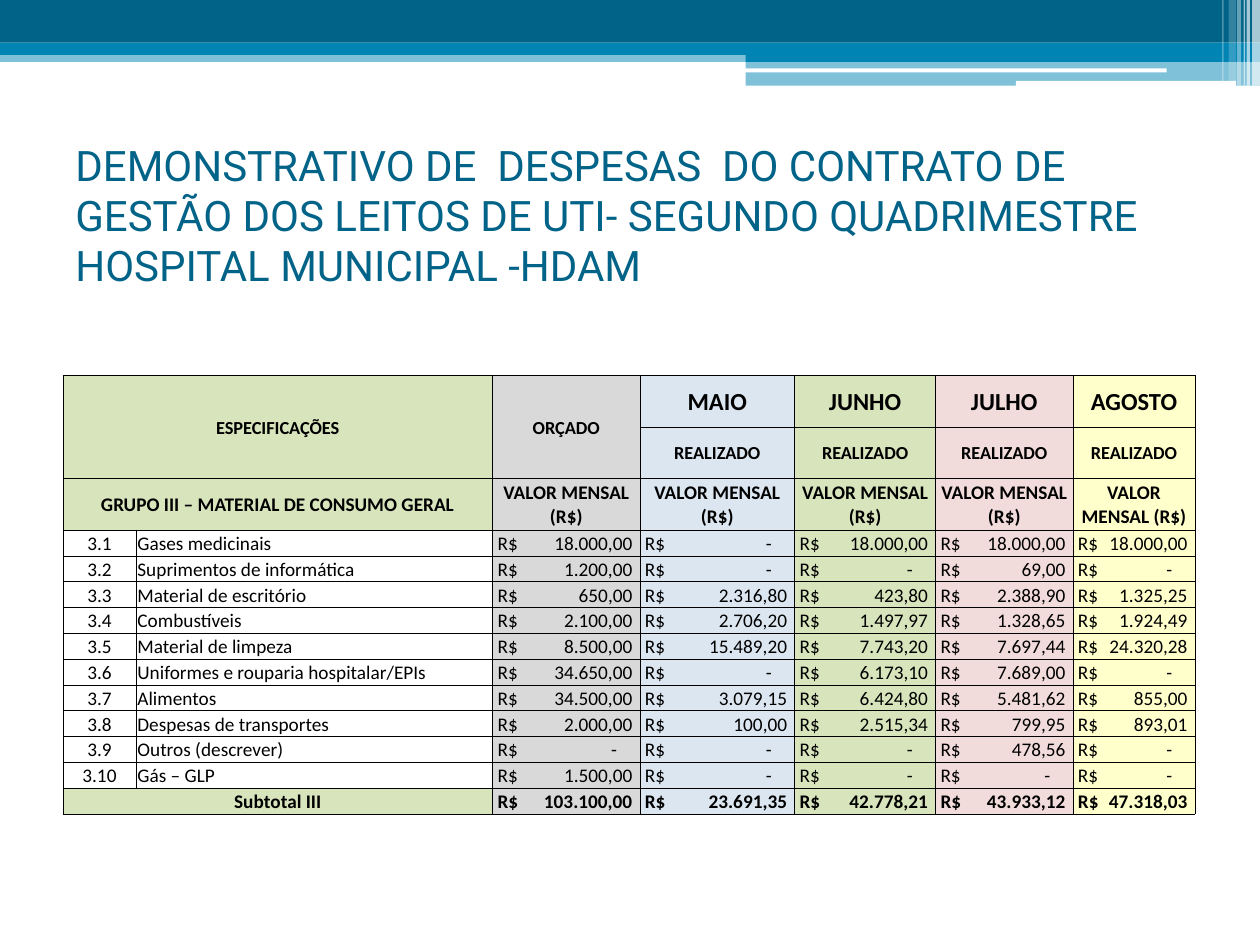
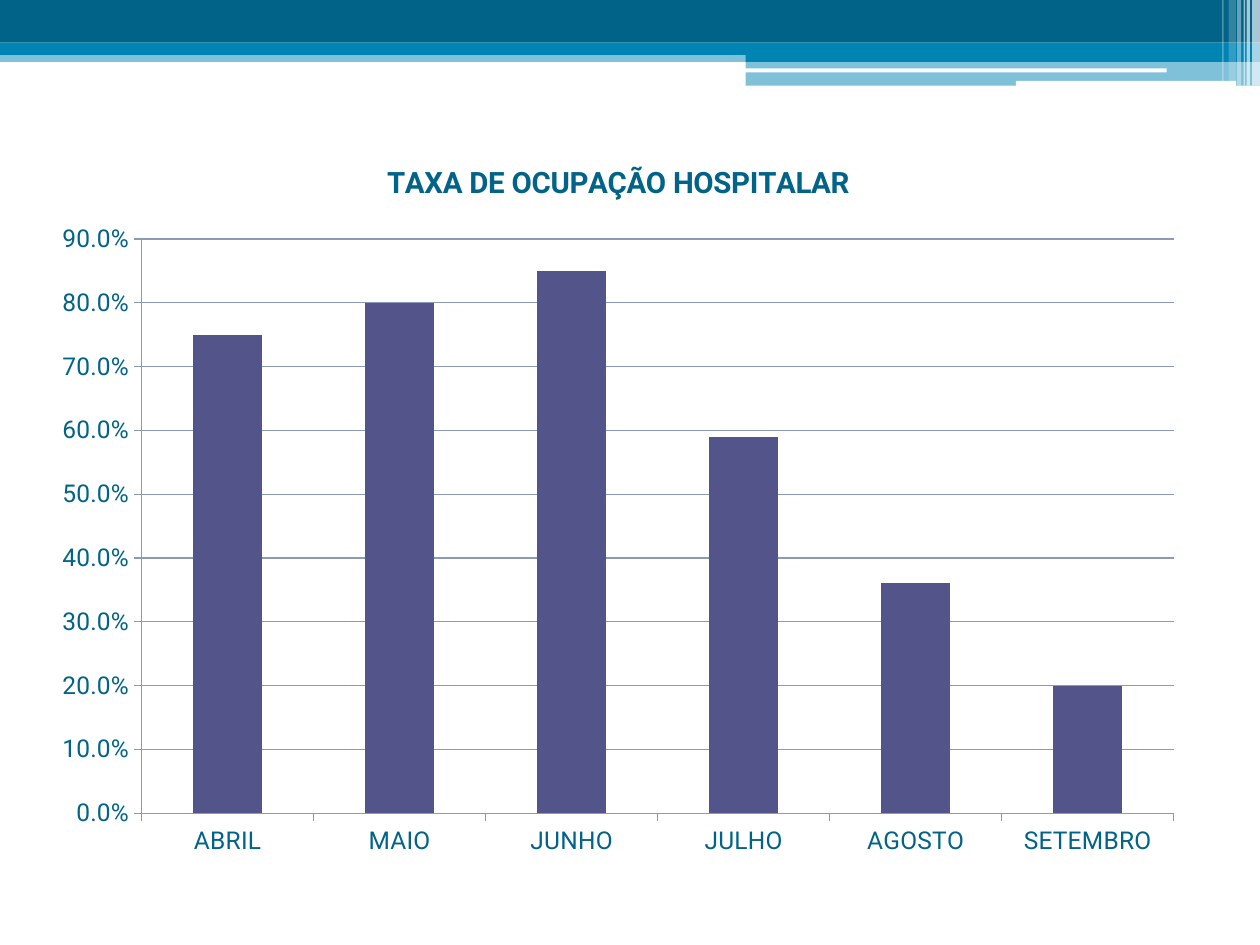
from lxml.etree import SubElement
from pptx import Presentation
from pptx.chart.data import CategoryChartData
from pptx.dml.color import RGBColor
from pptx.enum.chart import XL_CHART_TYPE as ChartType, XL_TICK_MARK as TickMark
from pptx.enum.shapes import MSO_SHAPE as Preset
from pptx.enum.text import MSO_ANCHOR as Anchor, PP_ALIGN as Align
from pptx.oxml import parse_xml
from pptx.oxml.ns import nsdecls, qn
from pptx.util import Cm, Pt

NAVY, BLUE, WHITE, BLACK = "006387", "0084B4", "FFFFFF", "000000"
GREEN, GRAY, PALE_BLUE, PINK, YELLOW = "D8E4BC", "D9D9D9", "DCE6F1", "F2DCDB", "FFFFCC"
BAR, AXIS = "53548A", "8A9CB5"

BANDS = [
    (0, 1.02, 25.4, 0.23, BLUE, 50),
    (0, 0, 25.4, 0.86, NAVY, 100),
    (0, 0.86, 25.4, 0.25, BLUE, 100),
    (15.03, 1, 10.37, 0.25, BLUE, 100),
    (15.03, 1.23, 10.37, 0.5, BLUE, 50),
]
WHITE_BARS = [(15.02, 1.38, 8.5, 0.08), (20.48, 1.63, 4.44, 0.1)]
STRIPES = [
    (25.24, 0.16, 1.73, 65),
    (25.13, 0.07, 1.73, 65),
    (25.07, 0.03, 1.73, 60),
    (24.94, 0.08, 1.73, 40),
    (24.77, 0.15, 1.63, 20),
    (24.64, 0.03, 1.63, 30),
]

TITLE = ("DEMONSTRATIVO DE  DESPESAS  DO CONTRATO DE GESTÃO DOS LEITOS DE UTI- "
         "SEGUNDO QUADRIMESTRE\nHOSPITAL MUNICIPAL -HDAM")
COLUMN_WIDTHS = [1.47, 7.19, 2.97, 3.12, 2.84, 2.77, 2.46]
VALUE_FILLS = [GRAY, PALE_BLUE, GREEN, PINK, YELLOW]
MONTHS = ["MAIO", "JUNHO", "JULHO", "AGOSTO"]
EXPENSES = [
    ("3.1", "Gases medicinais", "18.000,00", "-", "18.000,00", "18.000,00", "18.000,00"),
    ("3.2", "Suprimentos de informática", "1.200,00", "-", "-", "69,00", "-"),
    ("3.3", "Material de escritório", "650,00", "2.316,80", "423,80", "2.388,90", "1.325,25"),
    ("3.4", "Combustíveis", "2.100,00", "2.706,20", "1.497,97", "1.328,65", "1.924,49"),
    ("3.5", "Material de limpeza", "8.500,00", "15.489,20", "7.743,20", "7.697,44", "24.320,28"),
    ("3.6", "Uniformes e rouparia hospitalar/EPIs", "34.650,00", "-", "6.173,10", "7.689,00", "-"),
    ("3.7", "Alimentos", "34.500,00", "3.079,15", "6.424,80", "5.481,62", "855,00"),
    ("3.8", "Despesas de transportes", "2.000,00", "100,00", "2.515,34", "799,95", "893,01"),
    ("3.9", "Outros (descrever)", "-", "-", "-", "478,56", "-"),
    ("3.10", "Gás – GLP", "1.500,00", "-", "-", "-", "-"),
]
SUBTOTALS = ["103.100,00", "23.691,35", "42.778,21", "43.933,12", "47.318,03"]
OCCUPANCY = {"ABRIL": 0.75, "MAIO": 0.8, "JUNHO": 0.85,
             "JULHO": 0.59, "AGOSTO": 0.36, "SETEMBRO": 0.2}


def color(value):
    """Turn a hex string into a colour."""
    return RGBColor.from_string(value)


def write(frame, text, size=11, font="Calibri", fill=BLACK, bold=False, align=Align.LEFT):
    """Put formatted text into the first paragraph of a text frame."""
    paragraph = frame.paragraphs[0]
    paragraph.text = text
    paragraph.alignment = align
    for run in paragraph.runs:
        run.font.size, run.font.name, run.font.bold = Pt(size), font, bold
        run.font.color.rgb = color(fill)
    return paragraph


def draw_borders(cell):
    """Draw a thin black line on every side of a cell."""
    properties = cell._tc.get_or_add_tcPr()
    for index, side in enumerate("LRTB"):
        properties.insert(index, parse_xml(
            f'<a:ln{side} {nsdecls("a")} w="{Pt(0.5)}"><a:solidFill>'
            f'<a:srgbClr val="{BLACK}"/></a:solidFill></a:ln{side}>'))


class Deck:
    """Hold the presentation, its style and the current slide."""

    def __init__(self):
        """Open an empty 4:3 presentation."""
        self.presentation = Presentation()
        self.presentation.slide_width, self.presentation.slide_height = Cm(25.4), Cm(19.05)
        self.slide = None

    def add_slide(self):
        """Start a slide with the shared header."""
        self.slide = self.presentation.slides.add_slide(self.presentation.slide_layouts[6])
        for *box, fill, opacity in BANDS:
            self.add_band(box, fill, opacity)
        for box in WHITE_BARS:
            self.add_band(box, WHITE, preset=Preset.ROUNDED_RECTANGLE)
        for left, width, height, opacity in STRIPES:
            self.add_band((left, 0, width, height), WHITE, opacity)

    def add_band(self, box, fill, opacity=100, preset=Preset.RECTANGLE):
        """Add a plain filled shape, translucent below full opacity."""
        shape = self.slide.shapes.add_shape(preset, *map(Cm, box))
        shape.shadow.inherit = False
        shape.fill.solid()
        shape.fill.fore_color.rgb = color(fill)
        shape.line.fill.background()
        if opacity < 100:
            fill_color = shape.element.spPr.find(".//" + qn("a:srgbClr"))
            SubElement(fill_color, qn("a:alpha")).set("val", str(opacity * 1000))

    def add_title(self, text):
        """Add the slide title."""
        frame = self.slide.shapes.add_textbox(Cm(1.27), Cm(2.74), Cm(22.86), Cm(3.18)).text_frame
        frame.word_wrap = True
        frame.vertical_anchor = Anchor.MIDDLE
        write(frame, text, size=24, font="Roboto", fill=NAVY)

    def add_table(self, left, top, widths, heights):
        """Add an unstyled table with thin borders."""
        table = self.slide.shapes.add_table(
            len(heights), len(widths), Cm(left), Cm(top), Cm(sum(widths)), Cm(sum(heights))).table
        table.first_row = table.horz_banding = False
        for column, width in zip(table.columns, widths):
            column.width = Cm(width)
        for row, height in zip(table.rows, heights):
            row.height = Cm(height)
        for cell in table.iter_cells():
            cell.fill.background()
            cell.margin_left = cell.margin_right = cell.margin_top = Cm(0.03)
            cell.margin_bottom = 0
            cell.vertical_anchor = Anchor.MIDDLE
            draw_borders(cell)
        return table

    def fill_cell(self, cell, text, fill=None, **text_format):
        """Write one cell and colour it."""
        if fill:
            cell.fill.solid()
            cell.fill.fore_color.rgb = color(fill)
        return write(cell.text_frame, text, **text_format)

    def fill_amounts(self, table, row, amounts, bold=False):
        """Write a row of amounts, each right-aligned by a tab stop."""
        for column, (amount, fill) in enumerate(zip(amounts, VALUE_FILLS), 2):
            cell = table.cell(row, column)
            cell.margin_left = Cm(0.1)
            paragraph = self.fill_cell(cell, f"R$\t{amount}", fill, bold=bold)
            right_gap = 0.56 if amount == "-" else 0.25
            tabs = SubElement(paragraph._p.get_or_add_pPr(), qn("a:tabLst"))
            position = Cm(COLUMN_WIDTHS[column] - right_gap)
            SubElement(tabs, qn("a:tab"), pos=str(int(position)), algn="r")

    def add_column_chart(self, box, title, values):
        """Add a single-series column chart of percentages."""
        data = CategoryChartData()
        data.categories = list(values)
        data.add_series(title, list(values.values()))
        chart = self.slide.shapes.add_chart(
            ChartType.COLUMN_CLUSTERED, *map(Cm, box), data).chart
        chart.font.size, chart.font.name = Pt(14), "Roboto"
        chart.font.color.rgb = color(NAVY)
        chart.has_legend = False
        chart.has_title = True
        write(chart.chart_title.text_frame, title, size=16.8, font="Roboto",
              fill=NAVY, bold=True, align=Align.CENTER)
        plot = chart.plots[0]
        plot.gap_width, plot.vary_by_categories = 150, False
        plot.series[0].format.fill.solid()
        plot.series[0].format.fill.fore_color.rgb = color(BAR)
        value_axis = chart.value_axis
        value_axis.minimum_scale, value_axis.maximum_scale, value_axis.major_unit = 0, 0.9, 0.1
        value_axis.tick_labels.number_format = "0.0%"
        value_axis.tick_labels.number_format_is_linked = False
        for axis in (chart.category_axis, value_axis):
            axis.major_tick_mark = TickMark.OUTSIDE
        for part in (chart.category_axis, value_axis, value_axis.major_gridlines):
            part.format.line.color.rgb = color(AXIS)
            part.format.line.width = Pt(0.75)


def add_expense_table(deck):
    """Fill the table of budgeted and actual expenses."""
    table = deck.add_table(1.27, 7.57, COLUMN_WIDTHS, [1.04] * 3 + [0.52] * 11)
    heading = dict(bold=True, align=Align.CENTER)
    last = len(EXPENSES) + 3
    table.cell(0, 0).merge(table.cell(1, 1))
    table.cell(0, 2).merge(table.cell(1, 2))
    for row in (2, last):
        table.cell(row, 0).merge(table.cell(row, 1))
    deck.fill_cell(table.cell(0, 0), "ESPECIFICAÇÕES", GREEN, size=10.5, **heading)
    deck.fill_cell(table.cell(0, 2), "ORÇADO", GRAY, size=10.5, **heading)
    for column, (month, fill) in enumerate(zip(MONTHS, VALUE_FILLS[1:]), 3):
        deck.fill_cell(table.cell(0, column), month, fill, size=14, **heading)
        deck.fill_cell(table.cell(1, column), "REALIZADO", fill, size=10.5, **heading)
    deck.fill_cell(table.cell(2, 0), "GRUPO III – MATERIAL DE CONSUMO GERAL", GREEN, **heading)
    for column, fill in enumerate(VALUE_FILLS, 2):
        deck.fill_cell(table.cell(2, column), "VALOR MENSAL (R$)", fill, **heading)
    for row, (number, name, *amounts) in enumerate(EXPENSES, 3):
        deck.fill_cell(table.cell(row, 0), number, align=Align.CENTER)
        deck.fill_cell(table.cell(row, 1), name)
        deck.fill_amounts(table, row, amounts)
    deck.fill_cell(table.cell(last, 0), "Subtotal III", GREEN, **heading)
    deck.fill_amounts(table, last, SUBTOTALS, bold=True)


def main():
    """Build both slides and save them."""
    deck = Deck()
    deck.add_slide()
    add_expense_table(deck)
    deck.add_title(TITLE)
    deck.add_slide()
    deck.add_column_chart((0.79, 2.77, 23.34, 14.78), "TAXA DE OCUPAÇÃO HOSPITALAR", OCCUPANCY)
    deck.presentation.save("out.pptx")


if __name__ == "__main__":
    main()
